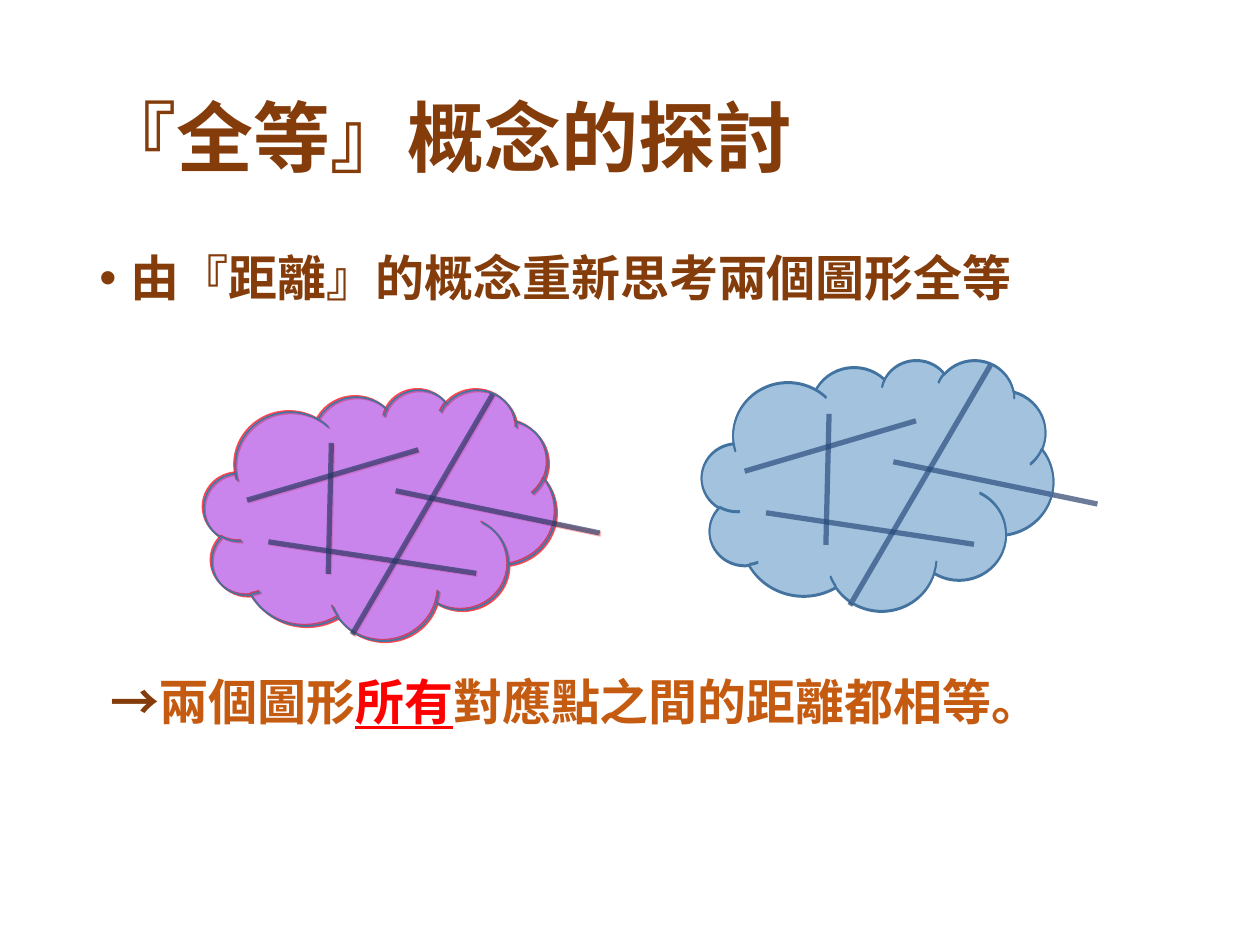
"""Build a slide on congruence seen through distances between matching points."""
from lxml.etree import SubElement
from pptx import Presentation
from pptx.dml.color import RGBColor
from pptx.enum.shapes import MSO_CONNECTOR, MSO_SHAPE
from pptx.enum.text import MSO_ANCHOR
from pptx.oxml.ns import qn
from pptx.util import Inches, Pt

THEME = {
    "font": "Noto Sans CJK SC", "title": 44, "body": 28,
    "brown": "843C0B", "orange": "C55A11", "red": "FF0000",
    "pink": {"fill": ("FF66FF", 50), "edge": ("FF0000", 67), "segment": ("FF0000", 30)},
    "blue": {"fill": ("2E75B6", 25), "edge": ("43739E", 100), "segment": ("203864", 65)},
}
COLS, ROWS = 100, 75
TEXTS = [
    {"at": (6.9, 4, 86.2, 14.5), "size": "title", "anchor": MSO_ANCHOR.MIDDLE,
     "runs": [("『全等』概念的探討", "brown", False)]},
    {"at": (6.9, 19.7, 86.2, 7), "size": "body", "bullet": "•", "indent": (2.5, -2.5),
     "runs": [("由『距離』的概念重新思考兩個圖形全等", "brown", False)]},
    {"at": (6.9, 53.3, 86.2, 7), "size": "body", "indent": (0.9, 0),
     "runs": [("→", "brown", False), ("兩個圖形", "orange", False),
              ("所有", "red", True), ("對應點之間的距離都相等。", "orange", False)]},
]
CLOUD = (27.9, 19.9)
SEGMENTS = [
    ((3.4, 8.8), (17, 4.8)),
    ((10.1, 4.25), (9.85, 14.65)),
    ((5.1, 12.1), (21.6, 14.6)),
    ((22.9, 0.4), (11.75, 19.45)),
    ((15.2, 8.05), (31.4, 11.4)),
]
FIGURES = [
    ((16.3, 31), "pink", True),
    ((16.1, 30.8), "pink", False),
    ((55.7, 28.6), "blue", True),
    ((55.7, 28.5), "blue", False),
    ((16.2, 30.9), "blue", True),
]

prs = Presentation()
prs.slide_width, prs.slide_height = Inches(10), Inches(7.5)
s = prs.slides.add_slide(prs.slide_layouts[6])


def x(col):
    return round(prs.slide_width * col / COLS)


def y(row):
    return round(prs.slide_height * row / ROWS)


def set_attrs(obj, values):
    for name, value in values.items():
        setattr(obj, name, value)


def paint(fill, color, opacity):
    fill.solid()
    fill.fore_color.rgb = RGBColor.from_string(color)
    if opacity < 100:
        clr = fill._xPr.find(qn("a:solidFill"))[0]
        SubElement(clr, qn("a:alpha"), val=str(opacity * 1000))


def add_text(at, size, runs, anchor=MSO_ANCHOR.TOP, indent=(0, 0), bullet=None):
    left, top, width, height = at
    tf = s.shapes.add_textbox(x(left), y(top), x(width), y(height)).text_frame
    set_attrs(tf, {"word_wrap": True, "vertical_anchor": anchor})
    p = tf.paragraphs[0]
    p.line_spacing = 0.9
    ppr = p._p.get_or_add_pPr()
    ppr.set("marL", str(x(indent[0])))
    ppr.set("indent", str(x(indent[1])))
    if bullet:
        SubElement(ppr, qn("a:buFont"), typeface="Arial")
        SubElement(ppr, qn("a:buChar"), char=bullet)
    for text, color, underline in runs:
        r = p.add_run()
        r.text = text
        set_attrs(r.font, {"name": THEME["font"], "size": Pt(THEME[size]),
                           "bold": True, "underline": underline})
        r.font.color.rgb = RGBColor.from_string(THEME[color])
        SubElement(r.font._element, qn("a:ea"), typeface=THEME["font"])


def add_figure(origin, style, with_segments):
    look = THEME[style]
    left, top = origin
    shapes = s.shapes.add_group_shape().shapes if with_segments else s.shapes
    sp = shapes.add_shape(MSO_SHAPE.CLOUD, x(left), y(top), x(CLOUD[0]), y(CLOUD[1]))
    sp.shadow.inherit = False
    paint(sp.fill, *look["fill"])
    sp.line.width = Pt(1)
    paint(sp.line.fill, *look["edge"])
    for (x1, y1), (x2, y2) in SEGMENTS if with_segments else []:
        ln = shapes.add_connector(MSO_CONNECTOR.STRAIGHT, x(left + x1), y(top + y1),
                                  x(left + x2), y(top + y2))
        ln.line.width = Pt(3)
        paint(ln.line.fill, *look["segment"])
        SubElement(ln._element.spPr, qn("a:effectLst"))


for text in TEXTS:
    add_text(**text)
for figure in FIGURES:
    add_figure(*figure)
prs.save("out.pptx")
